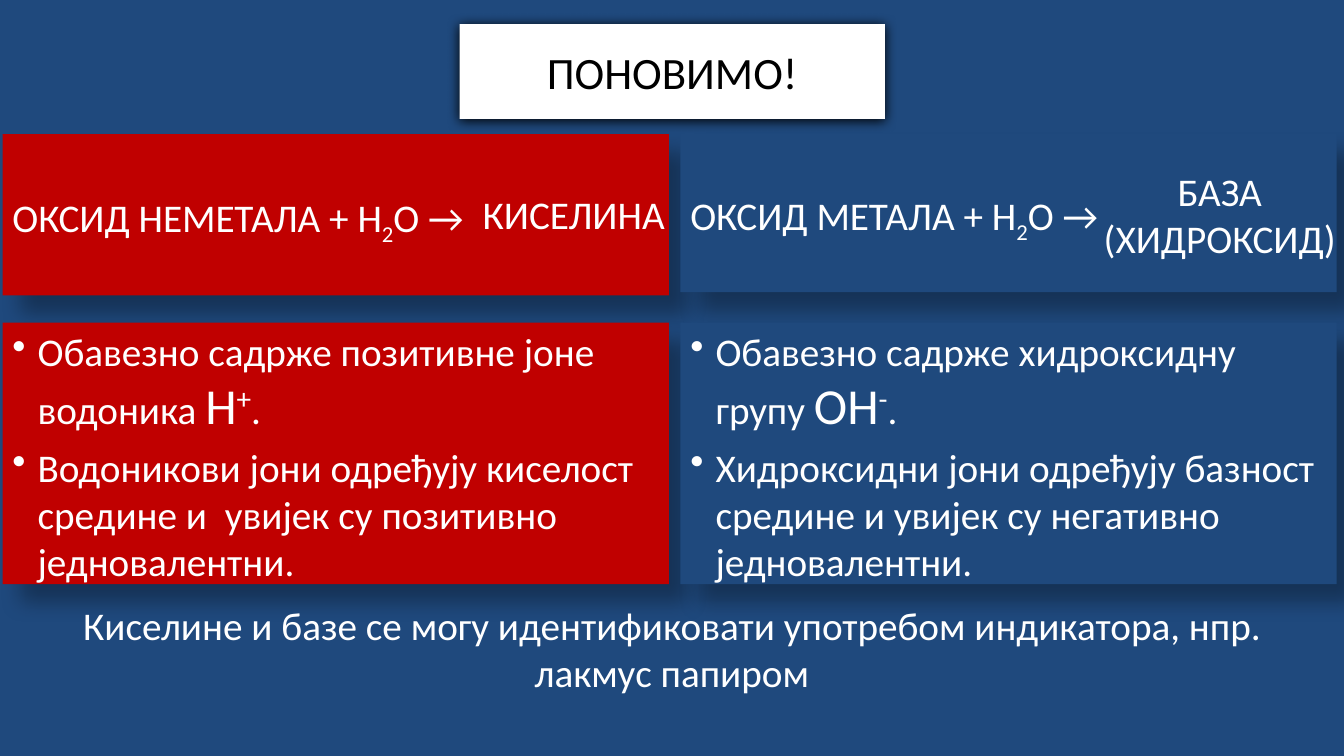
from lxml.etree import SubElement as Sub
from pptx import Presentation
from pptx.dml.color import RGBColor
from pptx.enum.shapes import MSO_SHAPE as Shape
from pptx.enum.text import MSO_ANCHOR as Anchor, MSO_AUTO_SIZE as Fit, PP_ALIGN as Align
from pptx.oxml.ns import qn
from pptx.util import Pt

# Content: a paragraph is a list of (text, size, baseline) runs
FONT, SIZE, BIG = "Calibri", 28, 36
WHITE, BLACK, RED, BLUE = "FFFFFF", "000000", "C00000", "1F497D"
TITLE = "ПОНОВИМО!"
SIDES = [
    # left, width, head height, fill, oxide, facts
    (1.8, 476, 115.2, RED, "ОКСИД НЕМЕТАЛА", [
        [("Обавезно садрже позитивне јоне водоника ", SIZE, 0),
         ("Н", BIG, 0), ("+", BIG, 30), (".", SIZE, 0)],
        [("Водоникови јони одређују киселост средине и  увијек су "
          "позитивно једновалентни.", SIZE, 0)]]),
    (486, 468.7, 113, BLUE, "ОКСИД МЕТАЛА", [
        [("Обавезно садрже хидроксидну групу ", SIZE, 0),
         ("ОН", BIG, 0), ("-", BIG, 30), (".", SIZE, 0)],
        [("Хидроксидни јони одређују базност средине и увијек су "
          "негативно једновалентни.", SIZE, 0)]]),
]
NOTES = [
    # place, lines, align, wrap
    ((780.5, 115.9, 181.4, 74.9), ["БАЗА", "(ХИДРОКСИД)"], Align.CENTER, True),
    ((337.7, 132.5, 146.2, 41), ["КИСЕЛИНА"], Align.LEFT, False),
    ((9.4, 426.2, 941, 74.9),
     ["Киселине и базе се могу идентификовати употребом индикатора, нпр. "
      "лакмус папиром"], Align.CENTER, True),
]
HEAD_TOP, FACT_TOP, FACT_H = 95.8, 230.4, 186.8
# Shadows: alpha %, blur, distance, angle
CRISP, SOFT = (100, 8.5, 1, 90), (30, 15, 18, 45)

deck = Presentation()
deck.slide_width, deck.slide_height = Pt(960), Pt(540)
slide = deck.slides.add_slide(deck.slide_layouts[6])


def paint(fill, tone):
    fill.solid()
    fill.fore_color.rgb = RGBColor.from_string(tone)


def write(frame, paras, tone=WHITE, size=SIZE, align=Align.LEFT):
    for i, runs in enumerate(paras):
        para = frame.add_paragraph() if i else frame.paragraphs[0]
        para.alignment = align
        para.font.name, para.font.size = FONT, Pt(size)
        paint(para.font.fill, tone)
        for text, pts, base in runs:
            run = para.add_run()
            run.text = text
            if pts != size:
                run.font.size = Pt(pts)
            if base:
                run._r.get_or_add_rPr().set("baseline", str(base * 1000))


def panel(place, tone, glow, anchor=Anchor.MIDDLE):
    box = slide.shapes.add_shape(Shape.RECTANGLE, *map(Pt, place))
    paint(box.fill, tone)
    box.line.fill.background()
    box.shadow.inherit = False
    alpha, blur, dist, angle = glow
    list_ = box._element.spPr.find(qn("a:effectLst"))
    shade = Sub(list_, qn("a:outerShdw"), blurRad=str(Pt(blur)),
                dist=str(Pt(dist)), dir=str(angle * 60000),
                algn="tl", rotWithShape="0")
    ink = Sub(shade, qn("a:srgbClr"), val=BLACK)
    Sub(ink, qn("a:alpha"), val=str(alpha * 1000))
    frame = box.text_frame
    frame.word_wrap = True
    frame.vertical_anchor = anchor
    return frame


def bullet(para):
    props = para._p.get_or_add_pPr()
    props.set("marL", str(Pt(18)))
    props.set("indent", str(-Pt(18)))
    mark = Sub(props, qn("a:buChar"), char="•")
    props.find(qn("a:defRPr")).addprevious(mark)


# Background and title
paint(slide.background.fill, BLUE)
write(panel((328.3, 17.3, 303.8, 67.7), WHITE, CRISP),
      [[(TITLE, 32, 0)]], BLACK, 32, Align.CENTER)

# Acid and base columns
for left, width, high, tone, oxide, facts in SIDES:
    head = panel((left, HEAD_TOP, width, high), tone, SOFT)
    write(head, [[(oxide + " + Н", SIZE, 0), ("2", SIZE, -25), ("О →", SIZE, 0)]])
    head.paragraphs[0].line_spacing = 1.2
    head.paragraphs[0].space_before = Pt(5.6)
    body = panel((left, FACT_TOP, width, FACT_H), tone, SOFT, Anchor.TOP)
    write(body, facts)
    for para in body.paragraphs:
        para.space_before = Pt(5.6)
        bullet(para)

# Products and closing note
for place, lines, align, wrap in NOTES:
    frame = slide.shapes.add_textbox(*map(Pt, place)).text_frame
    frame.word_wrap = wrap
    frame.auto_size = Fit.SHAPE_TO_FIT_TEXT
    write(frame, [[(line, SIZE, 0)] for line in lines], align=align)

deck.save("out.pptx")
